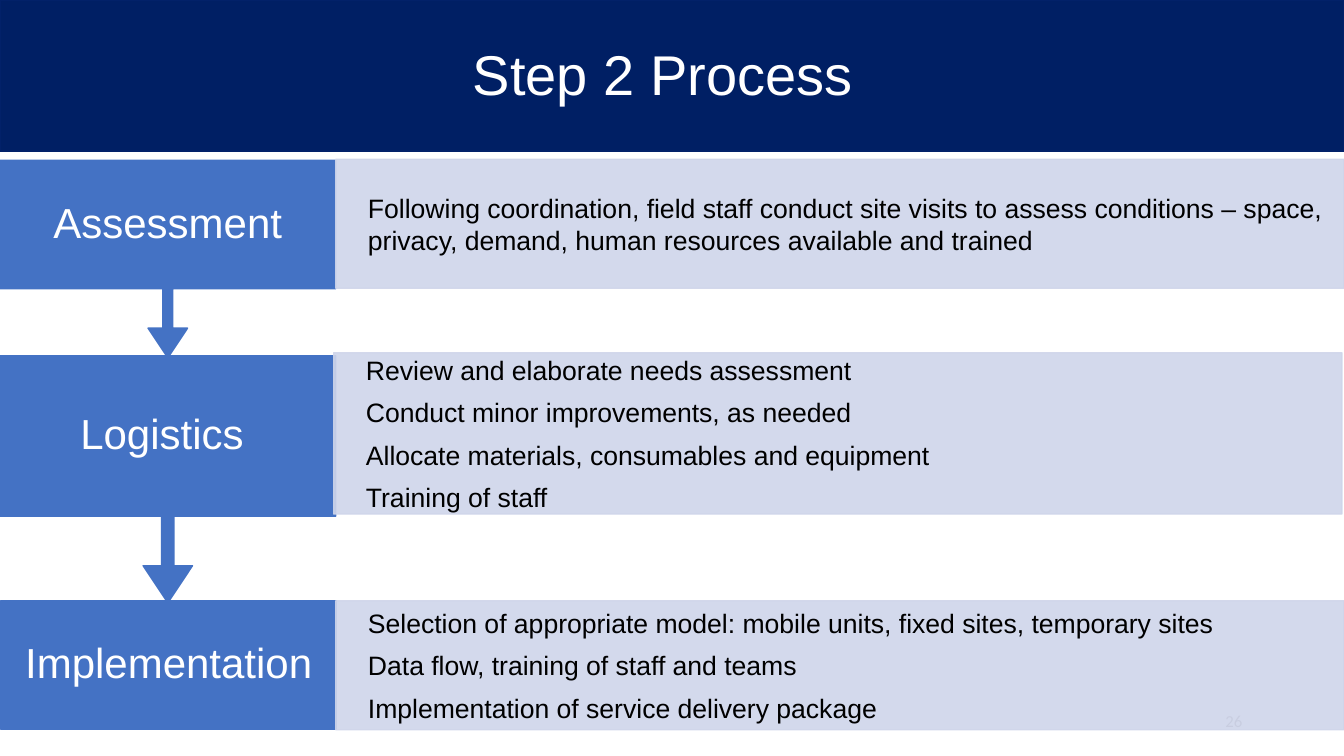
from lxml import etree
from pptx import Presentation
from pptx.dml.color import RGBColor
from pptx.enum.shapes import MSO_SHAPE
from pptx.enum.text import MSO_ANCHOR, MSO_AUTO_SIZE, PP_ALIGN
from pptx.oxml.ns import qn
from pptx.util import Inches, Pt

RECTANGLE = MSO_SHAPE.RECTANGLE
ARROW_CALLOUT = MSO_SHAPE.DOWN_ARROW_CALLOUT
MIDDLE = MSO_ANCHOR.MIDDLE
LEFT, CENTER, RIGHT = PP_ALIGN.LEFT, PP_ALIGN.CENTER, PP_ALIGN.RIGHT

NAVY = RGBColor(0x00, 0x1F, 0x64)
NAVY_EDGE = RGBColor(0x02, 0x21, 0x69)
BLUE = RGBColor(0x44, 0x72, 0xC4)
PALE_BLUE = RGBColor(0xCF, 0xD5, 0xEA)
GRAY = RGBColor(0x8C, 0x8C, 0x8C)
WHITE = RGBColor(0xFF, 0xFF, 0xFF)
BLACK = RGBColor(0x00, 0x00, 0x00)

BODY_WIDTH, LABEL_WIDTH = 10, 3.33
CALLOUT_PROPORTIONS = (0.05, 0.1, 0.15, 0.65)

# label, (left, top, height), callout?, (body left, top, height), body lines
STEPS = [
    ("Assessment", (0, 1.59, 1.96), True, (3.33, 1.58, 1.28),
     ["Following coordination, field staff conduct site visits to assess "
      "conditions – space, privacy, demand, human resources available and trained"]),
    ("Logistics ", (0, 3.53, 2.45), True, (3.31, 3.5, 1.6),
     ["Review and elaborate needs assessment",
      "Conduct minor improvements, as needed",
      "Allocate materials, consumables and equipment",
      "Training of staff"]),
    ("Implementation", (0.01, 5.96, 1.28), False, (3.33, 5.96, 1.28),
     ["Selection of appropriate model: mobile units, fixed sites, temporary sites",
      "Data flow, training of staff and teams",
      "Implementation of service delivery package"]),
]


def write_text(shape, lines, size, color, font="Arial", align=LEFT,
               spacing=1.0, after=0, left=0.1, right=0.1):
    frame = shape.text_frame
    frame.word_wrap = True
    frame.auto_size = MSO_AUTO_SIZE.NONE
    frame.vertical_anchor = MIDDLE
    frame.margin_left, frame.margin_right = Inches(left), Inches(right)
    frame.margin_top = frame.margin_bottom = 0
    frame.text = "\n".join(lines)
    for paragraph in frame.paragraphs:
        paragraph.alignment = align
        paragraph.line_spacing = spacing
        paragraph.space_before = Pt(0)
        paragraph.space_after = Pt(after)
        paragraph.font.size = Pt(size)
        paragraph.font.name = font
        paragraph.font.color.rgb = color


def add_panel(preset, left, top, width, height, fill, edge, opacity=100):
    """Add a filled shape; opacity is a percentage for fill and line."""
    panel = slide.shapes.add_shape(
        preset, Inches(left), Inches(top), Inches(width), Inches(height))
    panel.shadow.inherit = False
    panel.fill.solid()
    panel.fill.fore_color.rgb = fill
    panel.line.color.rgb = edge
    panel.line.width = Pt(1)
    if opacity < 100:
        for color in panel._element.spPr.iter(qn("a:srgbClr")):
            etree.SubElement(color, qn("a:alpha"), val=str(opacity * 1000))
    return panel


presentation = Presentation()
presentation.slide_width = Inches(13.33)
presentation.slide_height = Inches(7.5)
slide = presentation.slides.add_slide(presentation.slide_layouts[5])

banner = add_panel(RECTANGLE, 0, 0, 13.33, 1.5, NAVY, NAVY_EDGE)
slide.shapes._spTree.insert(2, banner._element)  # behind the title

title = slide.shapes.title
title.left, title.top = Inches(0.9), Inches(0.35)
title.width, title.height = Inches(11.5), Inches(0.83)
write_text(title, ["Step 2 Process "], 40, WHITE, align=CENTER, spacing=0.9)

page_number = slide.shapes.add_textbox(
    Inches(9.42), Inches(6.95), Inches(3), Inches(0.4))
write_text(page_number, ["26"], 12, GRAY, font="Calibri", align=RIGHT)

for label, label_place, has_arrow, body_place, lines in STEPS:
    left, top, height = label_place
    step = add_panel(ARROW_CALLOUT if has_arrow else RECTANGLE,
                     left, top, LABEL_WIDTH, height, BLUE, BLUE)
    if has_arrow:
        for index, proportion in enumerate(CALLOUT_PROPORTIONS):
            step.adjustments[index] = proportion
    write_text(step, [label], 30, WHITE, align=CENTER, spacing=0.9)

    left, top, height = body_place
    body = add_panel(RECTANGLE, left, top, BODY_WIDTH, height,
                     PALE_BLUE, PALE_BLUE, opacity=90)
    write_text(body, lines, 19, BLACK, after=7.5, left=0.32, right=0.18)

presentation.save("out.pptx")
